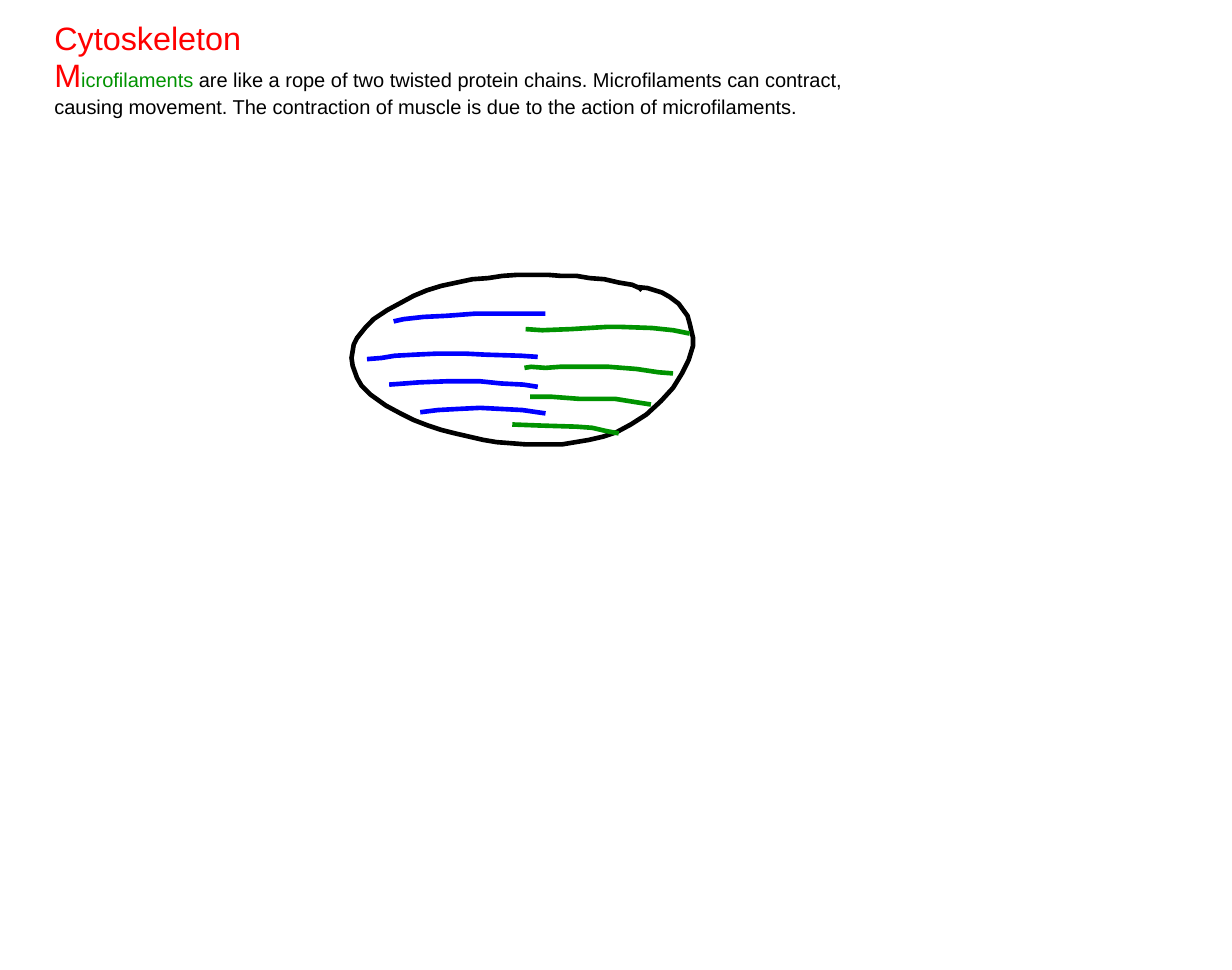
from dataclasses import dataclass

from lxml.etree import SubElement
from pptx import Presentation
from pptx.dml.color import RGBColor
from pptx.enum.text import MSO_ANCHOR, MSO_AUTO_SIZE, PP_ALIGN
from pptx.oxml.ns import qn
from pptx.shapes.placeholder import SlidePlaceholder
from pptx.slide import Slide
from pptx.text.text import _Paragraph as Paragraph
from pptx.util import Cm, Pt


@dataclass(frozen=True)
class Theme:
    font: str = "Arial"
    heading_size: int = 21
    body_size: int = 13
    stroke_width: int = 3
    red: str = "FF0000"
    green: str = "009300"
    blue: str = "0000FF"
    black: str = "000000"


THEME = Theme()
UNIT = Cm(2.54) / 100  # drawing grid: one hundredth of an inch
TEXT_LEFT, TEXT_WIDTH = Cm(0.99), Cm(19.53)


@dataclass(frozen=True)
class Stroke:
    color: str
    points: tuple[tuple[int, int], ...]


CELL_OUTLINE = Stroke(THEME.black, (
    (579, 262), (577, 260), (570, 257), (558, 255), (545, 252), (532, 251),
    (520, 249), (506, 249), (494, 248), (467, 248), (453, 249), (440, 251),
    (426, 252), (412, 255), (398, 258), (385, 262), (373, 267), (362, 273),
    (349, 280), (337, 288), (330, 295), (322, 305), (319, 311), (317, 323),
    (318, 330), (322, 341), (326, 348), (334, 356), (348, 366), (361, 373),
    (373, 379), (386, 384), (398, 388), (410, 391), (423, 394), (436, 397),
    (448, 399), (461, 400), (474, 401), (507, 401), (519, 399), (531, 397),
    (544, 394), (556, 390), (569, 383), (583, 374), (596, 362), (607, 350),
    (615, 337), (621, 325), (625, 312), (625, 305), (622, 292), (620, 285),
    (612, 274), (604, 268), (597, 264), (584, 260), (574, 259),
))

FILAMENTS = (
    Stroke(THEME.blue, ((355, 290), (364, 288), (382, 286), (403, 285),
                        (429, 283), (492, 283))),
    Stroke(THEME.blue, ((331, 324), (344, 323), (356, 321), (374, 320),
                        (395, 319), (419, 319), (438, 320), (470, 321),
                        (485, 322))),
    Stroke(THEME.blue, ((351, 347), (365, 346), (378, 345), (403, 344),
                        (433, 344), (452, 346), (472, 347), (485, 349))),
    Stroke(THEME.blue, ((379, 372), (395, 370), (413, 369), (433, 368),
                        (452, 369), (471, 370), (492, 373))),
    Stroke(THEME.green, ((474, 297), (489, 298), (515, 297), (547, 295),
                         (560, 295), (588, 296), (607, 298), (622, 301))),
    Stroke(THEME.green, ((473, 332), (479, 331), (492, 332), (505, 331),
                         (549, 331), (574, 333), (594, 336), (607, 337))),
    Stroke(THEME.green, ((478, 358), (497, 358), (523, 360), (555, 360),
                         (574, 363), (587, 365))),
    Stroke(THEME.green, ((462, 383), (488, 384), (520, 385), (534, 386),
                         (547, 389), (558, 391))),
)


def draw_stroke(page: Slide, stroke: Stroke) -> None:
    start, *rest = stroke.points
    builder = page.shapes.build_freeform(*start, scale=UNIT)
    builder.add_line_segments(rest, close=False)
    shape = builder.convert_to_shape()
    shape.shadow.inherit = False
    shape.fill.background()
    shape.line.color.rgb = RGBColor.from_string(stroke.color)
    shape.line.width = Pt(THEME.stroke_width)


def place_text(box: SlidePlaceholder, top: Cm, height: Cm) -> Paragraph:
    """Move and plainly format a placeholder; return its first paragraph."""
    box.left, box.top, box.width, box.height = TEXT_LEFT, top, TEXT_WIDTH, height
    frame = box.text_frame
    frame.word_wrap = True
    frame.auto_size = MSO_AUTO_SIZE.NONE
    frame.vertical_anchor = MSO_ANCHOR.TOP
    frame.margin_top = frame.margin_bottom = 0
    para = frame.paragraphs[0]
    properties = para._p.get_or_add_pPr()
    properties.set("marL", "0")
    properties.set("indent", "0")
    SubElement(properties, qn("a:buNone"))
    para.alignment = PP_ALIGN.LEFT
    para.space_before = Pt(0)
    return para


def add_span(para: Paragraph, text: str, *, size: int, color: str) -> None:
    span = para.add_run()
    span.text = text
    span.font.name = THEME.font
    span.font.size = Pt(size)
    span.font.color.rgb = RGBColor.from_string(color)


def main() -> None:
    deck = Presentation()
    deck.slide_width, deck.slide_height = Cm(28.22), Cm(22.23)
    page = deck.slides.add_slide(deck.slide_layouts[1])

    heading = place_text(page.shapes.title, Cm(0.41), Cm(0.86))
    add_span(heading, "Cytoskeleton", size=THEME.heading_size, color=THEME.red)

    body = place_text(page.placeholders[1], Cm(1.27), Cm(4.88))
    add_span(body, "M", size=THEME.heading_size, color=THEME.red)
    add_span(body, "icrofilaments ", size=THEME.body_size, color=THEME.green)
    add_span(body, "are like a rope of two twisted protein chains. "
             "Microfilaments can contract, causing movement. The contraction "
             "of muscle is due to the action of microfilaments.",
             size=THEME.body_size, color=THEME.black)

    for stroke in (CELL_OUTLINE, *FILAMENTS):
        draw_stroke(page, stroke)

    deck.save("out.pptx")


if __name__ == "__main__":
    main()
